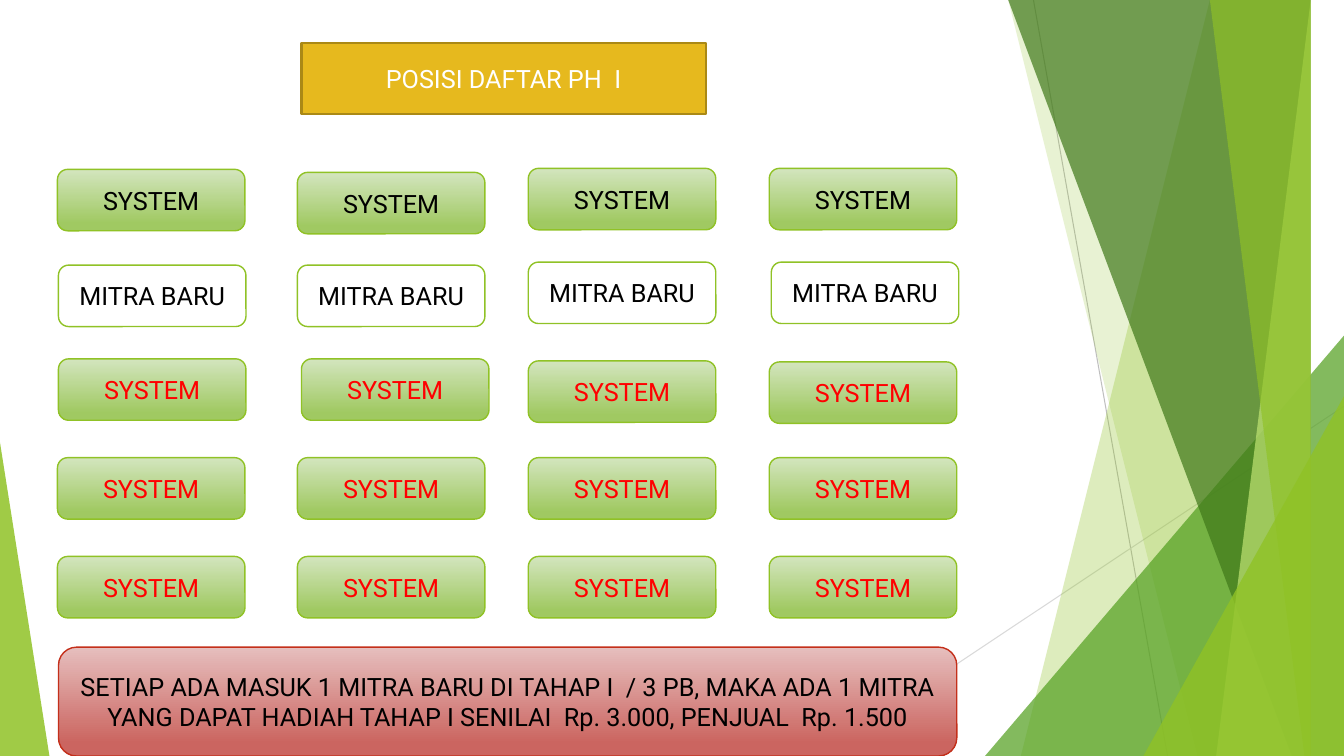
from pptx import Presentation
from pptx import util as u
from pptx.dml.color import RGBColor
from pptx.enum import shapes, text
from pptx.oxml.ns import qn
from lxml import etree

WIDTH, HEIGHT = 13.33, 7.5
TOP = -0.01
FONT = "Roboto"
LIME, BLACK, RED, WHITE = "90C226", "000000", "FF0000", "FFFFFF"
GREEN_FADE = ("D3E5BE", "A0C962")
RED_FADE = ("E6BFBE", "CB6560")

COLUMNS = [0.57, 2.95, 5.24, 7.63]
ROWS = [
    (1.67, "SYSTEM", GREEN_FADE, BLACK),
    (2.63, "MITRA BARU", WHITE, BLACK),
    (3.56, "SYSTEM", GREEN_FADE, RED),
    (4.54, "SYSTEM", GREEN_FADE, RED),
    (5.52, "SYSTEM", GREEN_FADE, RED),
]
CELL_SIZE = (1.86, 0.61)
# Hand-placed offsets from the grid, by (row, column)
NUDGES = {
    (0, 0): (0, 0.01), (0, 1): (0, 0.04),
    (1, 0): (0.01, 0), (1, 2): (0, -0.03), (1, 3): (0.02, -0.03),
    (2, 0): (0.01, 0), (2, 1): (0.04, 0), (2, 2): (0, 0.02), (2, 3): (0, 0.03),
}


def rgb(color):
    return RGBColor.from_string(color)


def paint(sp, fill, line=None, line_width=1):
    """Fill with one colour, or with a pair as a top-to-bottom gradient."""
    if isinstance(fill, tuple):
        sp.fill.gradient()
        sp.fill.gradient_angle = 270
        for stop, color, position in zip(sp.fill.gradient_stops, fill, (0, 0.88)):
            stop.color.rgb = rgb(color)
            stop.position = position
    else:
        sp.fill.solid()
        sp.fill.fore_color.rgb = rgb(fill)
    if line:
        sp.line.color.rgb = rgb(line)
        sp.line.width = u.Pt(line_width)
    else:
        sp.line.fill.background()


def set_opacity(sp, percent):
    color = sp._element.spPr.find(qn("a:solidFill"))[0]
    etree.SubElement(color, qn("a:alpha"), val=str(percent * 1000))


def write(sp, words, color):
    tf = sp.text_frame
    tf.text = words
    tf.word_wrap = True
    tf.auto_size = text.MSO_AUTO_SIZE.NONE
    tf.vertical_anchor = text.MSO_ANCHOR.MIDDLE
    p = tf.paragraphs[0]
    p.alignment = text.PP_ALIGN.CENTER
    font = p.runs[0].font
    font.name, font.size = FONT, u.Pt(18)
    font.color.rgb = rgb(color)


def add_preset(s, kind, x, y, w, h):
    sp = s.shapes.add_shape(kind, *map(u.Inches, (x, y, w, h)))
    sp.shadow.inherit = False
    return sp


def add_box(s, x, y, w, h, words, fill, line, color):
    sp = add_preset(s, shapes.MSO_SHAPE.ROUNDED_RECTANGLE, x, y, w, h)
    paint(sp, fill, line)
    write(sp, words, color)


def add_thin_line(s, start, end, color):
    line = s.shapes.add_connector(
        shapes.MSO_CONNECTOR.STRAIGHT, *map(u.Inches, start + end))
    line.line.color.rgb = rgb(color)
    line.line.width = u.Pt(0.75)
    etree.SubElement(line._element.spPr, qn("a:effectLst"))


def add_band(s, top_x, bottom_x, color, opacity):
    """Full-height band from a slanted left edge to the slide's right edge."""
    outline = s.shapes.build_freeform(top_x, TOP, scale=u.Inches(1))
    outline.add_line_segments(
        [(WIDTH, TOP), (WIDTH, HEIGHT), (bottom_x, HEIGHT)], close=True)
    sp = outline.convert_to_shape()
    sp.shadow.inherit = False
    paint(sp, color)
    set_opacity(sp, opacity)


def add_corner(s, x, w, h, apex, color, opacity):
    """Triangle standing on the slide's bottom edge."""
    sp = add_preset(s, shapes.MSO_SHAPE.ISOSCELES_TRIANGLE, x, HEIGHT - h, w, h)
    sp.adjustments[0] = apex
    paint(sp, color)
    set_opacity(sp, opacity)


def add_backdrop(s):
    add_thin_line(s, (10.25, 0), (11.58, HEIGHT), "BFBFBF")
    add_thin_line(s, (WIDTH, 4.03), (8.12, HEIGHT), "D9D9D9")
    add_band(s, 12.28, 10.04, LIME, 30)
    add_band(s, 10.5, 11.83, LIME, 20)
    add_corner(s, 9.77, 3.56, 4.17, 1, "54A021", 72)
    add_band(s, 10.21, 12.91, "3F7819", 70)
    add_band(s, 13.03, 11.92, "C0E474", 70)
    add_band(s, 11.96, 13.18, LIME, 65)
    add_corner(s, 11.34, 1.99, 3.57, 1, LIME, 80)
    add_corner(s, 0, 0.49, 3.11, 0, LIME, 85)


def format_title(s):
    sp = s.shapes.title
    sp.left, sp.top, sp.width, sp.height = map(u.Inches, (2.99, 0.43, 4.01, 0.7))
    geometry = etree.Element(qn("a:prstGeom"), prst="roundRect")
    etree.SubElement(geometry, qn("a:avLst"))
    sp._element.spPr.find(qn("a:xfrm")).addnext(geometry)
    paint(sp, "E6B91E", "AA8916", 1.5)
    write(sp, "POSISI DAFTAR PH  I", WHITE)


def add_position_grid(s):
    for row, (y, words, fill, color) in enumerate(ROWS):
        for column, x in enumerate(COLUMNS):
            dx, dy = NUDGES.get((row, column), (0, 0))
            add_box(s, x + dx, y + dy, *CELL_SIZE, words, fill, LIME, color)


def main():
    prs = Presentation()
    prs.slide_width, prs.slide_height = u.Inches(WIDTH), u.Inches(HEIGHT)
    s = prs.slides.add_slide(prs.slide_layouts[5])
    add_backdrop(s)
    format_title(s)
    add_position_grid(s)
    add_box(s, 0.58, 6.42, 8.91, 1.08,
            "SETIAP ADA MASUK 1 MITRA BARU DI TAHAP I  / 3 PB, MAKA ADA 1 MITRA "
            "YANG DAPAT HADIAH TAHAP I SENILAI  Rp. 3.000, PENJUAL  Rp. 1.500",
            RED_FADE, "C42F1A", BLACK)
    prs.save("out.pptx")


if __name__ == "__main__":
    main()
